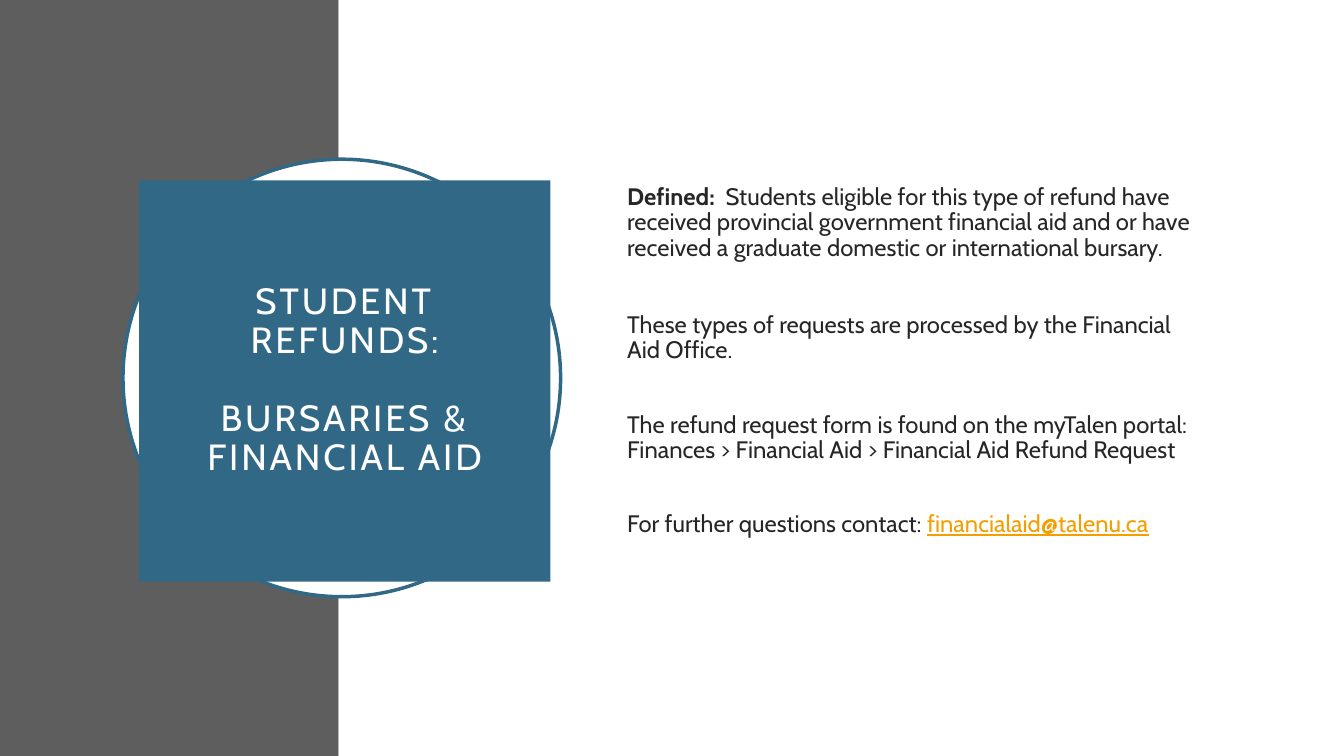
from pptx import Presentation, util as u
from pptx.dml.color import RGBColor
from pptx.enum import shapes as es, text as et

WIDE, HIGH = u.Inches(13.33), u.Inches(7.5)
GREY = RGBColor(0x5E, 0x5E, 0x5E)
BLUE = RGBColor(0x31, 0x68, 0x86)
WHITE = RGBColor(0xFF, 0xFF, 0xFF)
INK = RGBColor(0x26, 0x26, 0x26)
GOLD = RGBColor(0xF5, 0x9E, 0x00)
FONT = "Cabin"
SPLIT = 3.36

HEADS = ["STUDENT REFUNDS:", "BURSARIES & FINANCIAL AID"]
# Space before in points, then runs of text and style
NOTES = [
    (0, [("Defined:  ", "bold"),
         ("Students eligible for this type of refund have received provincial "
          "government financial aid and or have received a graduate domestic "
          "or international bursary.", "")]),
    (36.5, [("These types of requests are processed by the Financial Aid Office.", "")]),
    (34.5, [("The refund request form is found on the myTalen portal:", ""),
            ("Finances > Financial Aid > Financial Aid Refund Request", "break")]),
    (34.5, [("For further questions contact: ", ""),
            ("financialaid@talenu.ca", "mail")]),
]


def place(item, left, top, wide, high):
    """Position a placeholder in inches and bring it to the front."""
    item.left, item.top = u.Inches(left), u.Inches(top)
    item.width, item.height = u.Inches(wide), u.Inches(high)
    item.element.getparent().append(item.element)


def fill(item, color):
    item.fill.solid()
    item.fill.fore_color.rgb = color


def add_form(slide, kind, box, color, edge=None):
    form = slide.shapes.add_shape(kind, *map(u.Inches, box))
    form.shadow.inherit = False
    fill(form, color)
    if edge:
        form.line.color.rgb = edge
        form.line.width = u.Pt(2.5)
    else:
        form.line.fill.background()


def set_frame(item, anchor, side, top):
    """Fix the wrap, anchor and margins of a placeholder's text."""
    frame = item.text_frame
    frame.word_wrap = True
    frame.auto_size = et.MSO_AUTO_SIZE.NONE
    frame.vertical_anchor = anchor
    frame.margin_left = frame.margin_right = u.Inches(side)
    frame.margin_top = frame.margin_bottom = u.Inches(top)
    return frame


def add_para(frame, first, align, before):
    para = frame.paragraphs[0] if first else frame.add_paragraph()
    para.alignment = align
    para.line_spacing = 0.9
    para.space_before, para.space_after = u.Pt(before), u.Pt(0)
    return para


def add_run(para, words, size, color):
    run = para.add_run()
    run.text = words
    font = run.font
    font.name, font.size = FONT, u.Pt(size)
    font.color.rgb = color
    return font


def add_title(slide):
    title = slide.shapes.title
    place(title, 1.38, 1.79, 4.08, 3.98)
    fill(title, BLUE)
    frame = set_frame(title, et.MSO_ANCHOR.MIDDLE, 0.6, 0.2)
    for i, words in enumerate(HEADS):
        para = add_para(frame, i == 0, et.PP_ALIGN.CENTER, 27.5 * i)
        font = add_run(para, words, 26, WHITE)
        font._element.set("spc", "200")


def add_body(slide):
    body = slide.placeholders[1]
    place(body, 6.12, 1.53, 5.82, 4.43)
    frame = set_frame(body, et.MSO_ANCHOR.TOP, 0.1, 0.3)
    for i, (before, runs) in enumerate(NOTES):
        para = add_para(frame, i == 0, et.PP_ALIGN.LEFT, before)
        props = para._p.get_or_add_pPr()
        props.set("marL", "0")
        props.set("indent", "0")
        props.append(props.makeelement(
            "{http://schemas.openxmlformats.org/drawingml/2006/main}buNone", {}))
        for words, style in runs:
            if style == "break":
                para.add_line_break()
            font = add_run(para, words, 17, GOLD if style == "mail" else INK)
            font.bold = style == "bold"
            font.underline = style == "mail"


def main():
    deck = Presentation()
    deck.slide_width, deck.slide_height = WIDE, HIGH
    slide = deck.slides.add_slide(deck.slide_layouts[1])
    kind = es.MSO_SHAPE
    add_form(slide, kind.RECTANGLE, (0, 0, SPLIT, HIGH.inches), GREY)
    add_form(slide, kind.RECTANGLE,
             (SPLIT, 0, WIDE.inches - SPLIT, HIGH.inches), WHITE)
    add_form(slide, kind.OVAL, (1.22, 1.58, 4.34, 4.34), WHITE, BLUE)
    add_title(slide)
    add_body(slide)
    deck.save("out.pptx")


if __name__ == "__main__":
    main()
